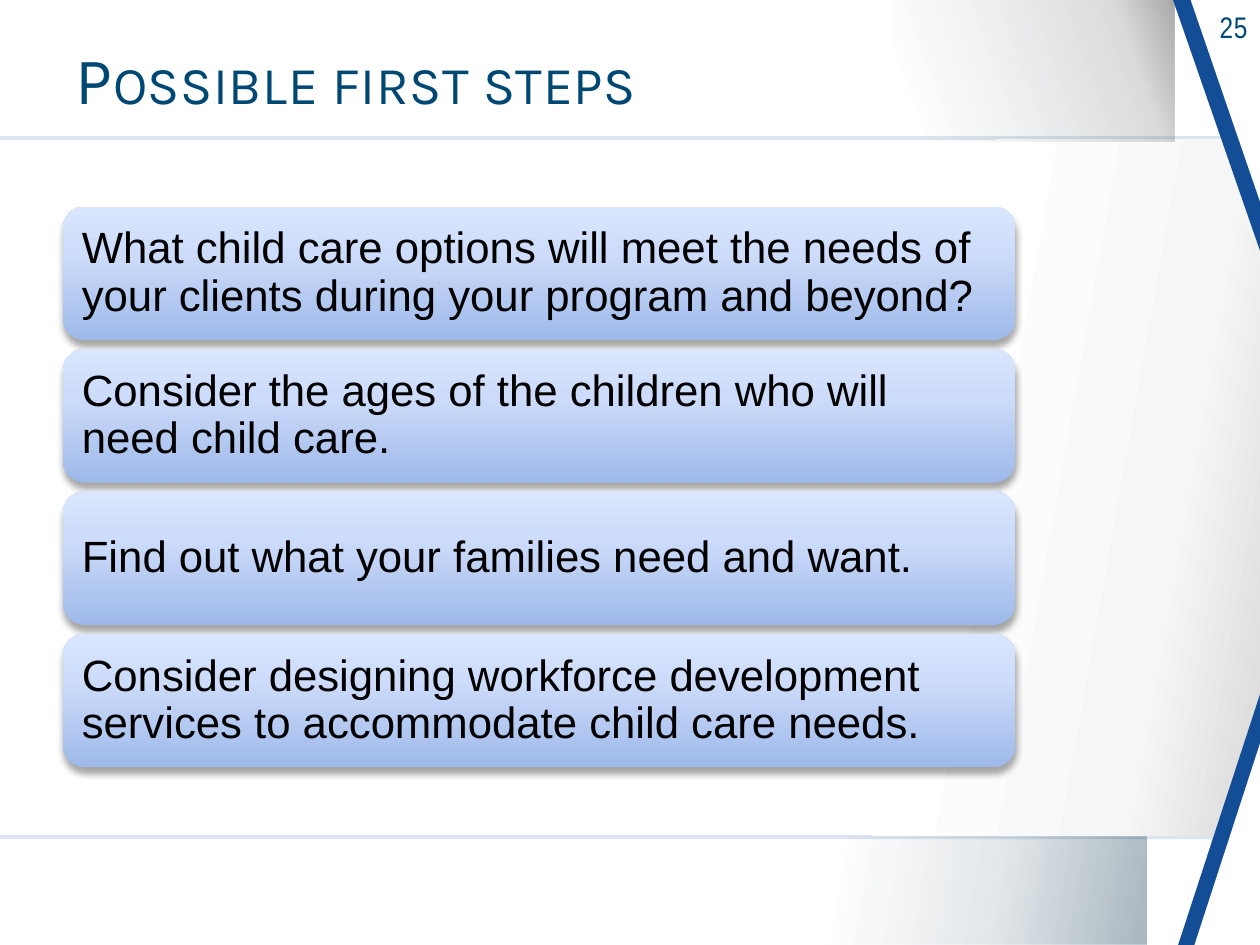
"""Build the "Possible first steps" slide with four gradient cards."""
from lxml import etree
from pptx import Presentation
from pptx.dml.color import RGBColor
from pptx.enum.shapes import MSO_SHAPE
from pptx.enum.text import MSO_ANCHOR, PP_ALIGN
from pptx.oxml.ns import qn
from pptx.util import Inches, Pt

RECTANGLE = MSO_SHAPE.RECTANGLE
TRIANGLE = MSO_SHAPE.ISOSCELES_TRIANGLE
ROUNDED = MSO_SHAPE.ROUNDED_RECTANGLE
LEFT, RIGHT = PP_ALIGN.LEFT, PP_ALIGN.RIGHT
TOP, MIDDLE = MSO_ANCHOR.TOP, MSO_ANCHOR.MIDDLE

WHITE = RGBColor(0xFF, 0xFF, 0xFF)
BLACK = RGBColor(0x00, 0x00, 0x00)
PALE_GRAY = RGBColor(0xF6, 0xF6, 0xF6)
GRAY = RGBColor(0xD9, 0xD9, 0xD9)
RULE_BLUE = RGBColor(0xDC, 0xE5, 0xEF)
NAVY = RGBColor(0x00, 0x2C, 0x47)
TITLE_BLUE = RGBColor(0x00, 0x48, 0x74)
STRIPE_BLUE = RGBColor(0x12, 0x4D, 0x95)
CARD_DARK = RGBColor(0x9E, 0xB9, 0xEA)
CARD_MIDDLE = RGBColor(0xCD, 0xDC, 0xFA)
CARD_LIGHT = RGBColor(0xD9, 0xE6, 0xFE)


def add_painted_shape(kind, box, color=None, stops=(), angle=0):
    shape = slide.shapes.add_shape(kind, *[Inches(length) for length in box])
    shape.shadow.inherit = False
    shape.line.fill.background()
    if color is not None:
        shape.fill.solid()
        shape.fill.fore_color.rgb = color
        return shape
    shape.fill.gradient()
    shape.fill.gradient_angle = (360 - angle) % 360
    stop_list = next(shape._element.spPr.iter(qn("a:gsLst")))
    for old_stop in list(stop_list):
        stop_list.remove(old_stop)
    for position, stop_color, opacity in stops:
        stop = etree.SubElement(stop_list, qn("a:gs"), pos=str(position * 1000))
        tint = etree.SubElement(stop, qn("a:srgbClr"), val=str(stop_color))
        etree.SubElement(tint, qn("a:alpha"), val=str(opacity * 1000))
    return shape


def write_text(shape, text, *, font, size, color, align=LEFT, anchor=MIDDLE,
               line_spacing=1.0, spacing=0, small_caps=False):
    frame = shape.text_frame
    frame.word_wrap = True
    frame.vertical_anchor = anchor
    paragraph = frame.paragraphs[0]
    paragraph.alignment = align
    paragraph.line_spacing = line_spacing
    run = paragraph.add_run()
    run.text = text
    run.font.name = font
    run.font.size = Pt(size)
    run.font.color.rgb = color
    properties = run.font._element
    properties.set("spc", str(spacing))
    if small_caps:
        properties.set("cap", "small")


presentation = Presentation()
presentation.slide_width = Inches(10)
presentation.slide_height = Inches(7.5)
slide = presentation.slides.add_slide(presentation.slide_layouts[5])

add_painted_shape(RECTANGLE, (0, 1.08, 10, 5.58), RULE_BLUE)
add_painted_shape(
    RECTANGLE, (0, 1.11, 10, 5.52), angle=10,
    stops=[(0, WHITE, 100), (72, WHITE, 100), (90, PALE_GRAY, 100), (100, GRAY, 100)])
add_painted_shape(
    RECTANGLE, (6.43, 6.64, 2.67, 0.86), angle=10,
    stops=[(10, NAVY, 0), (56, NAVY, 11), (100, NAVY, 34)])
add_painted_shape(
    RECTANGLE, (7.08, 0, 2.24, 1.12), angle=340,
    stops=[(10, NAVY, 0), (81, BLACK, 14), (100, BLACK, 34)])

corners = [
    ((9.31, 0, 0.69, 1.99), STRIPE_BLUE, 0, 180),
    ((9.45, 0, 0.55, 1.6), WHITE, 0, 180),
    ((9.35, 5.51, 0.65, 1.99), STRIPE_BLUE, 1, 0),
    ((9.48, 5.9, 0.52, 1.6), WHITE, 1, 0),
]
for box, color, apex, rotation in corners:
    corner = add_painted_shape(TRIANGLE, box, color)
    corner.adjustments[0] = apex
    corner.rotation = rotation

page_number = slide.shapes.add_textbox(Inches(9.2), Inches(0.02), Inches(0.8), Inches(0.39))
write_text(page_number, "25", font="Arial Narrow", size=17, color=TITLE_BLUE,
           align=RIGHT, anchor=TOP, spacing=40)

title = slide.shapes.title
title.left, title.top = Inches(0.5), Inches(0.24)
title.width, title.height = Inches(7.56), Inches(0.85)
slide.shapes._spTree.append(title._element)
write_text(title, "Possible first steps", font="Karla", size=38, color=TITLE_BLUE,
           line_spacing=0.85, spacing=40, small_caps=True)

steps = [
    "What child care options will meet the needs of your clients during your program and beyond?",
    "Consider the ages of the children who will need child care.",
    "Find out what your families need and want.",
    "Consider designing workforce development services to accommodate child care needs.",
]
CARD_TOP, CARD_PITCH = 1.64, 1.13
for index, step in enumerate(steps):
    card = add_painted_shape(
        ROUNDED, (0.5, CARD_TOP + index * CARD_PITCH, 7.56, 1.06), angle=270,
        stops=[(0, CARD_DARK, 100), (65, CARD_MIDDLE, 100), (100, CARD_LIGHT, 100)])
    effects = card._element.spPr.find(qn("a:effectLst"))
    shadow = etree.SubElement(
        effects, qn("a:outerShdw"), blurRad=str(Pt(4)), dist=str(Pt(3)),
        dir="5400000", rotWithShape="0")
    shadow_color = etree.SubElement(shadow, qn("a:srgbClr"), val=str(BLACK))
    etree.SubElement(shadow_color, qn("a:alpha"), val="35000")
    frame = card.text_frame
    frame.margin_left = frame.margin_right = Inches(0.1)
    frame.margin_top = frame.margin_bottom = Inches(0.1)
    write_text(card, step, font="Arial", size=25, color=BLACK, line_spacing=0.9)

presentation.save("out.pptx")
